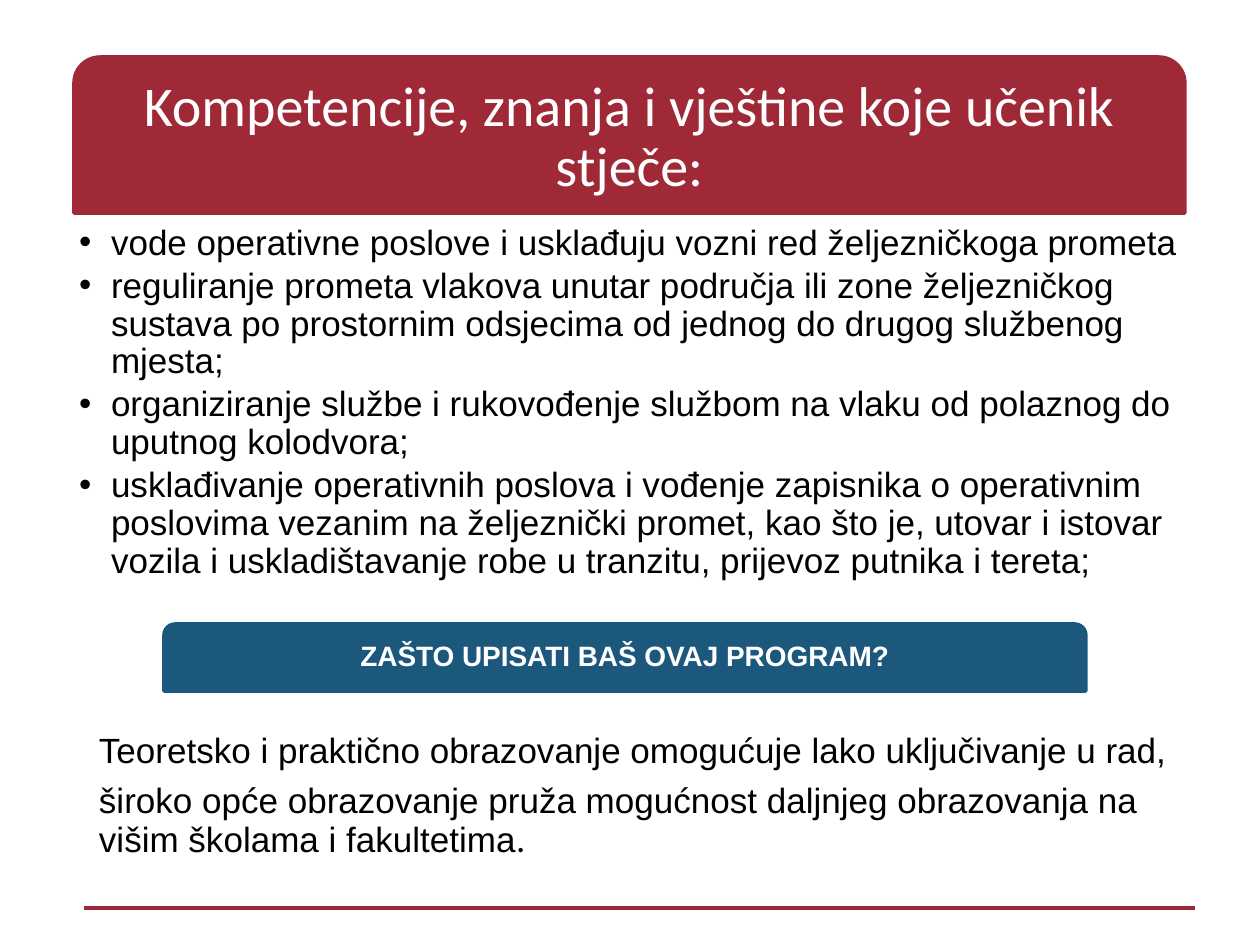
from pptx import Presentation
from pptx.dml.color import RGBColor
from pptx.enum.shapes import MSO_CONNECTOR, MSO_SHAPE
from pptx.enum.text import MSO_ANCHOR, MSO_AUTO_SIZE, PP_ALIGN
from pptx.oxml.ns import qn
from pptx.util import Pt
from lxml import etree

PX = 914400 / 126
COLORS = {"red": "9F2936", "blue": "1B587C", "white": "FFFFFF", "black": "000000"}
TOP_ROUNDED = MSO_SHAPE.ROUND_2_SAME_RECTANGLE
STRAIGHT = MSO_CONNECTOR.STRAIGHT
TOP, MIDDLE, BOTTOM = MSO_ANCHOR.TOP, MSO_ANCHOR.MIDDLE, MSO_ANCHOR.BOTTOM
LEFT, CENTER = PP_ALIGN.LEFT, PP_ALIGN.CENTER
NO_AUTOFIT = MSO_AUTO_SIZE.NONE

TITLE = "Kompetencije, znanja i vještine koje učenik stječe:"
COMPETENCES = [
    "vode operativne poslove i usklađuju vozni red željezničkoga prometa",
    "reguliranje prometa vlakova unutar područja ili zone željezničkog sustava "
    "po prostornim odsjecima od jednog do drugog službenog mjesta;",
    "organiziranje službe i rukovođenje službom na vlaku od polaznog do "
    "uputnog kolodvora;",
    "usklađivanje operativnih poslova i vođenje zapisnika o operativnim "
    "poslovima vezanim na željeznički promet, kao što je, utovar i istovar "
    "vozila i uskladištavanje robe u tranzitu, prijevoz putnika i tereta;",
]
QUESTION = "ZAŠTO UPISATI BAŠ OVAJ PROGRAM?"
REASONS = [
    "Teoretsko i praktično obrazovanje omogućuje lako uključivanje u rad,",
    "široko opće obrazovanje pruža mogućnost daljnjeg obrazovanja na višim "
    "školama i fakultetima",
]


def px(value):
    return round(value * PX)


def rgb(name):
    return RGBColor.from_string(COLORS[name])


def place(shape, box):
    shape.left, shape.top, shape.width, shape.height = map(px, box)


def style_font(font, face, size, color, bold=False):
    font.name, font.size, font.bold = face, Pt(size), bold
    font.color.rgb = rgb(color)


def write(shape, paragraphs, face="Arial", size=20, color="black", bold=False,
          align=LEFT, anchor=TOP, insets=(5, 5, 5, 5), after=0, bullet_indent=0):
    frame = shape.text_frame
    frame.word_wrap = True
    frame.auto_size = NO_AUTOFIT
    frame.vertical_anchor = anchor
    (frame.margin_left, frame.margin_top,
     frame.margin_right, frame.margin_bottom) = map(px, insets)
    for index, text in enumerate(paragraphs):
        paragraph = frame.add_paragraph() if index else frame.paragraphs[0]
        paragraph.alignment = align
        paragraph.line_spacing = 0.9
        paragraph.space_before = Pt(0)
        paragraph.space_after = Pt(after)
        if bullet_indent:
            properties = paragraph._p.get_or_add_pPr()
            properties.set("marL", str(px(bullet_indent)))
            properties.set("indent", str(-px(bullet_indent)))
            etree.SubElement(properties, qn("a:buChar")).set("char", "•")
        run = paragraph.add_run()
        run.text = text
        style_font(run.font, face, size, color, bold)
    return frame


def add_banner(slide, box, color):
    banner = slide.shapes.add_shape(TOP_ROUNDED, *map(px, box))
    banner.shadow.inherit = False
    banner.fill.solid()
    banner.fill.fore_color.rgb = rgb(color)
    banner.line.color.rgb = rgb(color)
    banner.line.width = Pt(2)
    return banner


def add_heading(slide, box):
    left, top, width, height = box
    banner = add_banner(slide, box, "red")
    title = slide.shapes.title
    title._element.addprevious(banner._element)
    place(title, (left + 8, top + 7, width - 16, height - 7))
    write(title, [TITLE], face="Calibri", size=32, color="white",
          align=CENTER, anchor=MIDDLE, insets=(9, 9, 9, 9))


def add_competences(slide, box):
    body = slide.placeholders[1]
    place(body, box)
    write(body, COMPETENCES, after=3, bullet_indent=32)


def add_question(slide, box):
    banner = add_banner(slide, box, "blue")
    write(banner, [QUESTION], size=16, color="white", bold=True,
          align=CENTER, anchor=MIDDLE, insets=(4, 4, 4, 7))


def add_reasons(slide, box):
    reasons = slide.shapes.add_textbox(*map(px, box))
    frame = write(reasons, REASONS, anchor=BOTTOM, insets=(5, 5, 5, 58), after=7)
    full_stop = frame.paragraphs[-1].add_run()
    full_stop.text = "."
    style_font(full_stop.font, "Calibri", 21, "black")


def add_footer_rule(slide, left, top, width):
    rule = slide.shapes.add_connector(
        STRAIGHT, px(left), px(top), px(left + width), px(top))
    rule.line.color.rgb = rgb("red")
    rule.line.width = Pt(2)
    etree.SubElement(rule._element.spPr, qn("a:effectLst"))


def main():
    presentation = Presentation()
    presentation.slide_width, presentation.slide_height = px(1260), px(945)
    slide = presentation.slides.add_slide(presentation.slide_layouts[1])
    add_footer_rule(slide, 84, 908, 1111)
    add_heading(slide, (74, 57, 1111, 156))
    add_competences(slide, (74, 220, 1111, 384))
    add_reasons(slide, (94, 677, 1111, 242))
    add_question(slide, (164, 624, 922, 67))
    presentation.save("out.pptx")


if __name__ == "__main__":
    main()
